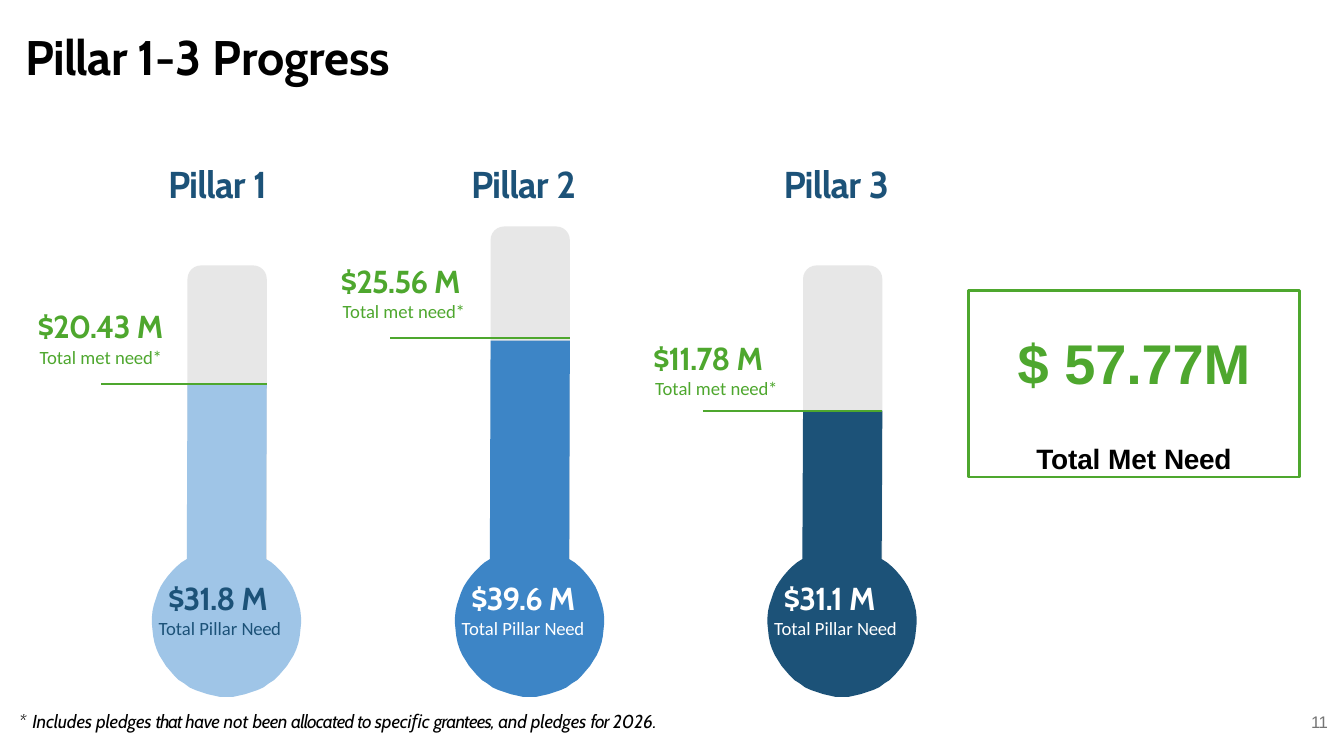
from math import asin, cos, pi, sin

from lxml.etree import SubElement
from pptx import Presentation
from pptx.dml.color import RGBColor
from pptx.enum.shapes import MSO_CONNECTOR, MSO_SHAPE
from pptx.enum.text import MSO_ANCHOR, MSO_AUTO_SIZE, PP_ALIGN
from pptx.oxml.ns import qn
from pptx.util import Pt

PX = 9144  # EMU in one px, 100 px to the inch

BLACK = RGBColor(0x00, 0x00, 0x00)
WHITE = RGBColor(0xFF, 0xFF, 0xFF)
GREEN = RGBColor(0x4E, 0xA7, 0x2E)
NAVY = RGBColor(0x1C, 0x52, 0x78)
BLUE = RGBColor(0x3D, 0x85, 0xC6)
LIGHT_BLUE = RGBColor(0x9F, 0xC5, 0xE7)
TUBE_GREY = RGBColor(0xE7, 0xE7, 0xE7)
NUMBER_GREY = RGBColor(0x75, 0x75, 0x75)

BULB_RADIUS = 111
BULB_MIDDLE = 926
TUBE_WIDTH = 118

# bulb left, tube top, fluid level, marker y, marker length, gap from label to marker
PILLARS = [
    dict(name="1", met="$20.43 ", need="$31.8 ", fluid=LIGHT_BLUE, ink=NAVY,
         box=(226, 395, 573, 571, 246, 117)),
    dict(name="2", met="$25.56 ", need="$39.6 ", fluid=BLUE, ink=WHITE,
         box=(677, 337, 507, 503, 267, 117)),
    dict(name="3", met="$11.78 ", need="$31.1 ", fluid=NAVY, ink=WHITE,
         box=(1142, 395, 611, 611, 267, 110)),
]

FOOTNOTE = [("* ", 1), ("Includes pledges ", -0.2), ("that ", -1.4), ("have ", -0.6),
            ("not ", 0), ("been ", -0.6), ("allocated", -0.9), (" to ", -1.1),
            ("speciﬁc ", -0.2), ("grantees, ", -0.9), ("and ", -0.4),
            ("pledges ", -0.2), ("for ", -1), ("2026.", -0.2)]


def place(shape, left, top, width, height):
    shape.left, shape.top = left * PX, top * PX
    shape.width, shape.height = width * PX, height * PX


def prepare_frame(frame, top_inset=3):
    frame.word_wrap = True
    frame.auto_size = MSO_AUTO_SIZE.SHAPE_TO_FIT_TEXT
    frame.vertical_anchor = MSO_ANCHOR.TOP
    frame.margin_left = frame.margin_right = frame.margin_bottom = 0
    frame.margin_top = top_inset * PX
    return frame


def write(para, spans, font="Cabin", size=20, color=BLACK, bold=False, italic=False,
          indent=3, before=2, align=PP_ALIGN.LEFT):
    """Fill a paragraph with (text, letter spacing in points) spans of one format."""
    para.alignment = align
    para.space_before = Pt(before)
    properties = para._p.get_or_add_pPr()
    properties.set("marL", str(indent * PX))
    properties.set("indent", "0")
    for text, spacing in spans:
        span = para.add_run()
        span.text = text
        span.font.name = font
        span.font.size = Pt(size)
        span.font.bold = bold
        span.font.italic = italic
        span.font.color.rgb = color
        span._r.get_or_add_rPr().set("spc", str(round(spacing * 100)))


def add_text(page, box, spans, **style):
    shape = page.shapes.add_textbox(*(length * PX for length in box))
    frame = prepare_frame(shape.text_frame)
    write(frame.paragraphs[0], spans, **style)
    return frame


def add_amount(page, left, top, amount, caption, color, indents):
    """Place a large amount in millions over its caption."""
    (number, spacing), (first, second) = amount, indents
    frame = add_text(page, (left, top, 208, 96), [(number, spacing), ("M", 3.2)],
                     size=34, color=color, bold=True, indent=first)
    write(frame.add_paragraph(), caption, font="Calibri", color=color,
          indent=second, before=0.5)


def paint(shape, color):
    shape.shadow.inherit = False
    shape.fill.solid()
    shape.fill.fore_color.rgb = color
    shape.line.fill.background()


def add_tube(page, left, top):
    tube = page.shapes.add_shape(MSO_SHAPE.ROUNDED_RECTANGLE, left * PX, top * PX,
                                 TUBE_WIDTH * PX, (855 - top) * PX)
    tube.adjustments[0] = 0.17
    paint(tube, TUBE_GREY)


def add_fluid(page, tube_left, middle, level, color):
    """Draw the bulb and the filled part of the tube as one outline."""
    opening = asin(TUBE_WIDTH / 2 / BULB_RADIUS)
    steps = 60
    angles = [opening + (2 * pi - 2 * opening) * step / steps for step in range(steps + 1)]
    arc = [(middle + BULB_RADIUS * sin(angle), BULB_MIDDLE - BULB_RADIUS * cos(angle))
           for angle in angles]
    tube_right = tube_left + TUBE_WIDTH
    outline = page.shapes.build_freeform(tube_right, level, scale=PX)
    outline.add_line_segments(arc + [(tube_left, level)], close=True)
    paint(outline.convert_to_shape(), color)


def add_marker(page, right, y, length):
    marker = page.shapes.add_connector(MSO_CONNECTOR.STRAIGHT, (right - length) * PX,
                                       y * PX, right * PX, y * PX)
    marker.line.color.rgb = GREEN
    marker.line.width = Pt(2.25)
    SubElement(marker._element.spPr, qn("a:effectLst"))


def add_pillar(page, box, name, met, need, fluid, ink):
    left, top, level, marker_y, marker_length, label_gap = box
    tube_left = left + 53
    add_tube(page, tube_left, top)
    add_fluid(page, tube_left, left + BULB_RADIUS, level, fluid)
    add_text(page, (left + 21, 237, 181, 72), [("Pillar ", -0.9), (name, -1)],
             size=40, color=NAVY, bold=True)
    add_amount(page, left + 7, 858, (need, -1.2),
               [("Total Pillar ", 0), ("Need", -0.4)], ink, (17, 3))
    add_amount(page, left - 173, marker_y - label_gap, (met, -1.1),
               [("Total met ", 0), ("need*", -0.2)], GREEN, (3, 6))
    add_marker(page, tube_left + TUBE_WIDTH, marker_y, marker_length)


def add_total(page, box):
    panel = page.shapes.add_shape(MSO_SHAPE.RECTANGLE, *(length * PX for length in box))
    panel.shadow.inherit = False
    panel.fill.background()
    panel.line.color.rgb = GREEN
    panel.line.width = Pt(3)
    frame = prepare_frame(panel.text_frame, top_inset=57)
    style = dict(font="Arial", bold=True, indent=0, align=PP_ALIGN.CENTER)
    write(frame.paragraphs[0], [("$ ", 0), ("57.77M", -0.2)],
          size=60, color=GREEN, before=41.3, **style)
    write(frame.add_paragraph(), [("Total ", -0.2), ("Met ", 0), ("Need", -0.4)],
          size=30, before=49.2, **style)


def add_title(page, box):
    title = page.shapes.title
    place(title, *box)
    frame = prepare_frame(title.text_frame)
    write(frame.paragraphs[0],
          [("Pillar ", -0.9), ("1-", -0.2), ("3 ", 0), ("Progress", -0.2)],
          size=52, bold=True)


def main():
    deck = Presentation()
    deck.slide_width, deck.slide_height = 2000 * PX, 1125 * PX
    page = deck.slides.add_slide(deck.slide_layouts[5])
    add_title(page, (35, 37, 614, 92))
    for pillar in PILLARS:
        add_pillar(page, **pillar)
    add_total(page, (1441, 432, 493, 278))
    add_text(page, (25, 1053, 1093, 36), FOOTNOTE, italic=True)
    add_text(page, (1948, 1056, 32, 33), [("11", -0.5)],
             font="Arial", size=18, color=NUMBER_GREY)
    deck.save("out.pptx")


if __name__ == "__main__":
    main()
